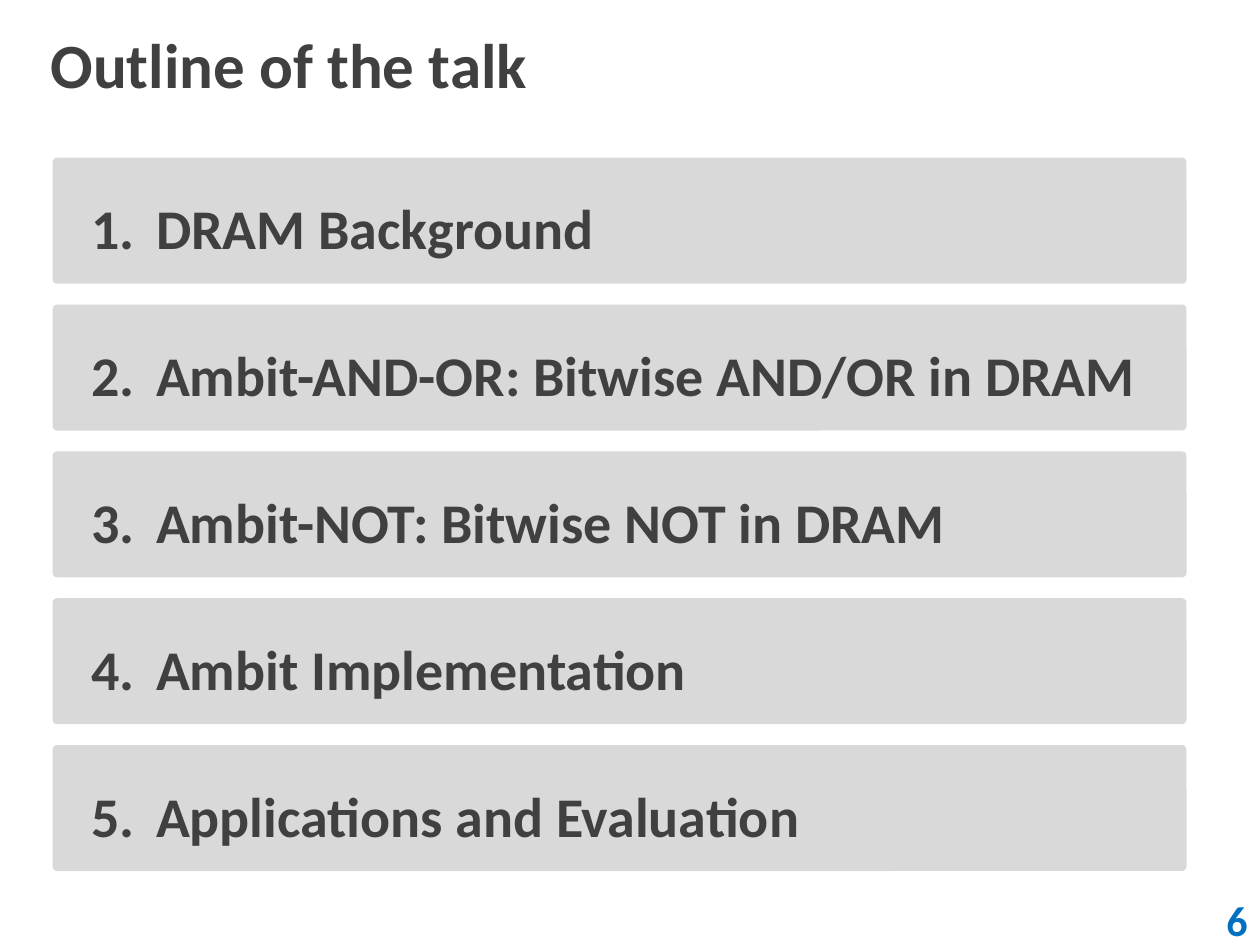
from dataclasses import dataclass

from lxml import etree
from pptx import Presentation
from pptx.dml.color import RGBColor
from pptx.enum.shapes import MSO_SHAPE
from pptx.enum.text import MSO_ANCHOR, MSO_AUTO_SIZE, PP_ALIGN
from pptx.oxml.ns import qn
from pptx.util import Cm, Pt

RECT = MSO_SHAPE.RECTANGLE
ROUNDED = MSO_SHAPE.ROUNDED_RECTANGLE
MIDDLE = MSO_ANCHOR.MIDDLE
NO_AUTOFIT = MSO_AUTO_SIZE.NONE
LEFT, RIGHT = PP_ALIGN.LEFT, PP_ALIGN.RIGHT
TITLE_ONLY = 5


@dataclass(frozen=True)
class Theme:
    font: str = "Calibri"
    text: RGBColor = RGBColor(0x40, 0x40, 0x40)
    accent: RGBColor = RGBColor(0x00, 0x70, 0xC0)
    bar: RGBColor = RGBColor(0xD9, 0xD9, 0xD9)
    paper: RGBColor = RGBColor(0xFF, 0xFF, 0xFF)
    title_size: Pt = Pt(36)
    item_size: Pt = Pt(32)
    number_size: Pt = Pt(24)


THEME = Theme()

TOPICS = [
    "DRAM Background",
    "Ambit-AND-OR: Bitwise AND/OR in DRAM",
    "Ambit-NOT: Bitwise NOT in DRAM",
    "Ambit Implementation",
    "Applications and Evaluation",
]

# Outline bars: equal height, equal pitch
BAR_LEFT, BAR_TOP = Cm(1.06), Cm(3.18)
BAR_WIDTH, BAR_HEIGHT = Cm(22.86), Cm(2.54)
BAR_PITCH = Cm(2.96)


def write(sp, text, size, color, align=LEFT, inset=Cm(0.25)):
    """Put one bold, vertically centred paragraph into a shape."""
    tf = sp.text_frame
    tf.word_wrap = True
    tf.auto_size = NO_AUTOFIT
    tf.vertical_anchor = MIDDLE
    tf.margin_left, tf.margin_right = inset, Cm(0.25)
    tf.margin_top = tf.margin_bottom = Cm(0.13)
    p = tf.paragraphs[0]
    p.text = text
    p.alignment = align
    for r in p.runs:
        r.font.name = THEME.font
        r.font.size = size
        r.font.bold = True
        r.font.color.rgb = color
    return p


def add_box(slide, kind, left, top, width, height, fill):
    sp = slide.shapes.add_shape(kind, left, top, width, height)
    sp.shadow.inherit = False
    sp.fill.solid()
    sp.fill.fore_color.rgb = fill
    sp.line.fill.background()
    return sp


def add_tab_stop(p, position):
    tabs = etree.SubElement(p._p.get_or_add_pPr(), qn("a:tabLst"))
    etree.SubElement(tabs, qn("a:tab"), pos=str(int(position)), algn="l")


def set_title(slide, text):
    title = slide.shapes.title
    title.left, title.top = Cm(0), Cm(0)
    title.width, title.height = Cm(25.4), Cm(2.54)
    write(title, text, THEME.title_size, THEME.text, inset=Cm(1.02))


def add_page_number(slide, number):
    sp = add_box(slide, RECT, Cm(20.32), Cm(18.03), Cm(5.08), Cm(1.02), THEME.paper)
    write(sp, str(number), THEME.number_size, THEME.accent, RIGHT)


def add_topic_bar(slide, index, topic):
    sp = add_box(slide, ROUNDED, BAR_LEFT, BAR_TOP + index * BAR_PITCH,
                 BAR_WIDTH, BAR_HEIGHT, THEME.bar)
    sp.adjustments[0] = 0.036
    p = write(sp, f"{index + 1}.\t{topic}", THEME.item_size, THEME.text, inset=Cm(0.76))
    p.line_spacing = 1.2
    add_tab_stop(p, Cm(1.3))


def main():
    prs = Presentation()
    prs.slide_width, prs.slide_height = Cm(25.4), Cm(19.05)
    slide = prs.slides.add_slide(prs.slide_layouts[TITLE_ONLY])

    # Heading and page number
    set_title(slide, "Outline of the talk")
    add_page_number(slide, 6)

    # Numbered outline
    for index, topic in enumerate(TOPICS):
        add_topic_bar(slide, index, topic)

    prs.save("out.pptx")


if __name__ == "__main__":
    main()
